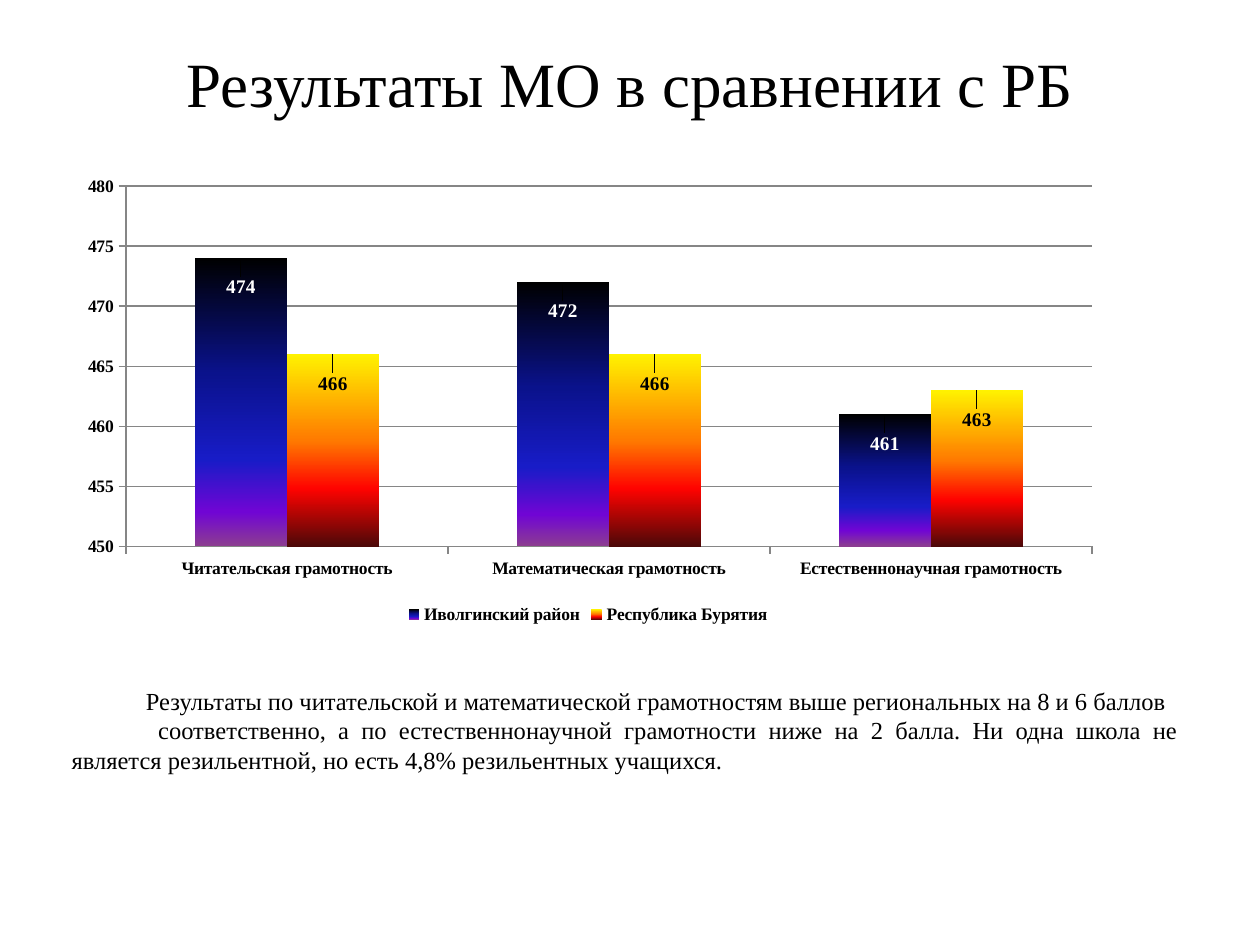
from lxml import etree
from pptx import Presentation, util as u
from pptx.chart.data import CategoryChartData
from pptx.dml.color import RGBColor
from pptx.enum import chart as ch, text
from pptx.oxml import parse_xml
from pptx.oxml.ns import nsdecls, qn

Pt = u.Pt
FONT = "Times New Roman"
COLORS = {"text": "000000", "label": "FFFFFF", "grid": "868686"}
CATEGORIES = ["Читательская грамотность", "Математическая грамотность",
              "Естественнонаучная грамотность"]
# name, values, label colour, gradient stops from top to bottom
SERIES = [
    ("Иволгинский район", (474, 472, 461), "label",
     {0: "000000", 40: "0A128C", 70: "181CC7", 88: "7005D4", 100: "8C3D91"}),
    ("Республика Бурятия", (466, 466, 463), "text",
     {0: "FFF200", 45: "FF7A00", 70: "FF0300", 100: "4D0808"}),
]
COMMENTS = [
    "Результаты по читательской и математической грамотностям выше региональных на 8 и 6 баллов",
    " соответственно, а по естественнонаучной грамотности ниже на 2 балла. "
    "Ни одна школа не является резильентной, но есть 4,8% резильентных учащихся.",
]


def style_font(font, size, color="text", bold=False):
    font.name, font.size, font.bold = FONT, Pt(size), bold
    font.color.rgb = RGBColor.from_string(COLORS[color])


def manual_layout(**values):
    """Return a c:layout element with the given fractions of the chart."""
    layout = parse_xml(f'<c:layout {nsdecls("c")}><c:manualLayout/></c:layout>')
    for name, value in values.items():
        etree.SubElement(layout[0], qn(f"c:{name}")).set("val", str(value))
    return layout


presentation = Presentation()
presentation.slide_width, presentation.slide_height = Pt(720), Pt(540)
slide = presentation.slides.add_slide(presentation.slide_layouts[6])

# Title
title = slide.shapes.add_textbox(Pt(36), Pt(21.6), Pt(648), Pt(90)).text_frame
title.word_wrap = True
title.vertical_anchor = text.MSO_ANCHOR.TOP
paragraph = title.paragraphs[0]
paragraph.alignment = text.PP_ALIGN.CENTER
run = paragraph.add_run()
run.text = "Результаты МО в сравнении с РБ"
style_font(run.font, 36)

# Chart
data = CategoryChartData(number_format="0")
data.categories = CATEGORIES
for name, values, _, _ in SERIES:
    data.add_series(name, values)
chart = slide.shapes.add_chart(ch.XL_CHART_TYPE.COLUMN_CLUSTERED, Pt(36), Pt(95.8),
                               Pt(600), Pt(264), data).chart
style_font(chart.font, 10)
chart.has_title = False
chart.has_legend = True
chart.legend.position = ch.XL_LEGEND_POSITION.BOTTOM
chart.legend.include_in_layout = False
style_font(chart.legend.font, 10, bold=True)

value_axis, category_axis = chart.value_axis, chart.category_axis
value_axis.minimum_scale, value_axis.maximum_scale, value_axis.major_unit = 450, 480, 5
value_axis.has_major_gridlines = True
value_axis.tick_labels.number_format = "0"
value_axis.tick_labels.number_format_is_linked = False
for axis in (value_axis, category_axis):
    axis.major_tick_mark = ch.XL_TICK_MARK.OUTSIDE
    style_font(axis.tick_labels.font, 10, bold=True)
for line in (value_axis.format.line, category_axis.format.line,
             value_axis.major_gridlines.format.line):
    line.color.rgb = RGBColor.from_string(COLORS["grid"])
    line.width = Pt(0.75)

plot_area = chart._chartSpace.chart.plotArea
for old_layout in plot_area.findall(qn("c:layout")):
    plot_area.remove(old_layout)
plot_area.insert(0, manual_layout(layoutTarget="inner", xMode="edge", yMode="edge",
                                  x=0.06, y=0.04, w=0.92, h=0.78))

plot = chart.plots[0]
plot.gap_width, plot.overlap = 150, 0
plot.vary_by_categories = False
for series, (_, values, label_color, stops) in zip(plot.series, SERIES):
    series.invert_if_negative = False
    stop_xml = "".join(f'<a:gs pos="{position * 1000}"><a:srgbClr val="{color}"/></a:gs>'
                       for position, color in stops.items())
    gradient = parse_xml(f'<a:gradFill {nsdecls("a")} rotWithShape="1"><a:gsLst>{stop_xml}'
                         '</a:gsLst><a:lin ang="5400000" scaled="0"/></a:gradFill>')
    series._element.get_or_add_spPr().append(gradient)
    for index in range(len(values)):
        label = series.points[index].data_label
        style_font(label.font, 11, label_color, bold=True)
        label.position = ch.XL_LABEL_POSITION.INSIDE_END
    for label_xml in series._element.iter(qn("c:dLbl")):
        label_xml.insert(1, manual_layout(x=0, y=0.03))

# Comment
comment = slide.shapes.add_textbox(Pt(33.8), Pt(388), Pt(646.6), Pt(58.3)).text_frame
comment.word_wrap = True
comment.vertical_anchor = text.MSO_ANCHOR.MIDDLE
for index, sentence in enumerate(COMMENTS):
    paragraph = comment.add_paragraph() if index else comment.paragraphs[0]
    paragraph.alignment = text.PP_ALIGN.JUSTIFY
    paragraph._p.get_or_add_pPr().set("indent", str(Pt(42.5)))
    run = paragraph.add_run()
    run.text = sentence
    style_font(run.font, 14)

presentation.save("out.pptx")
